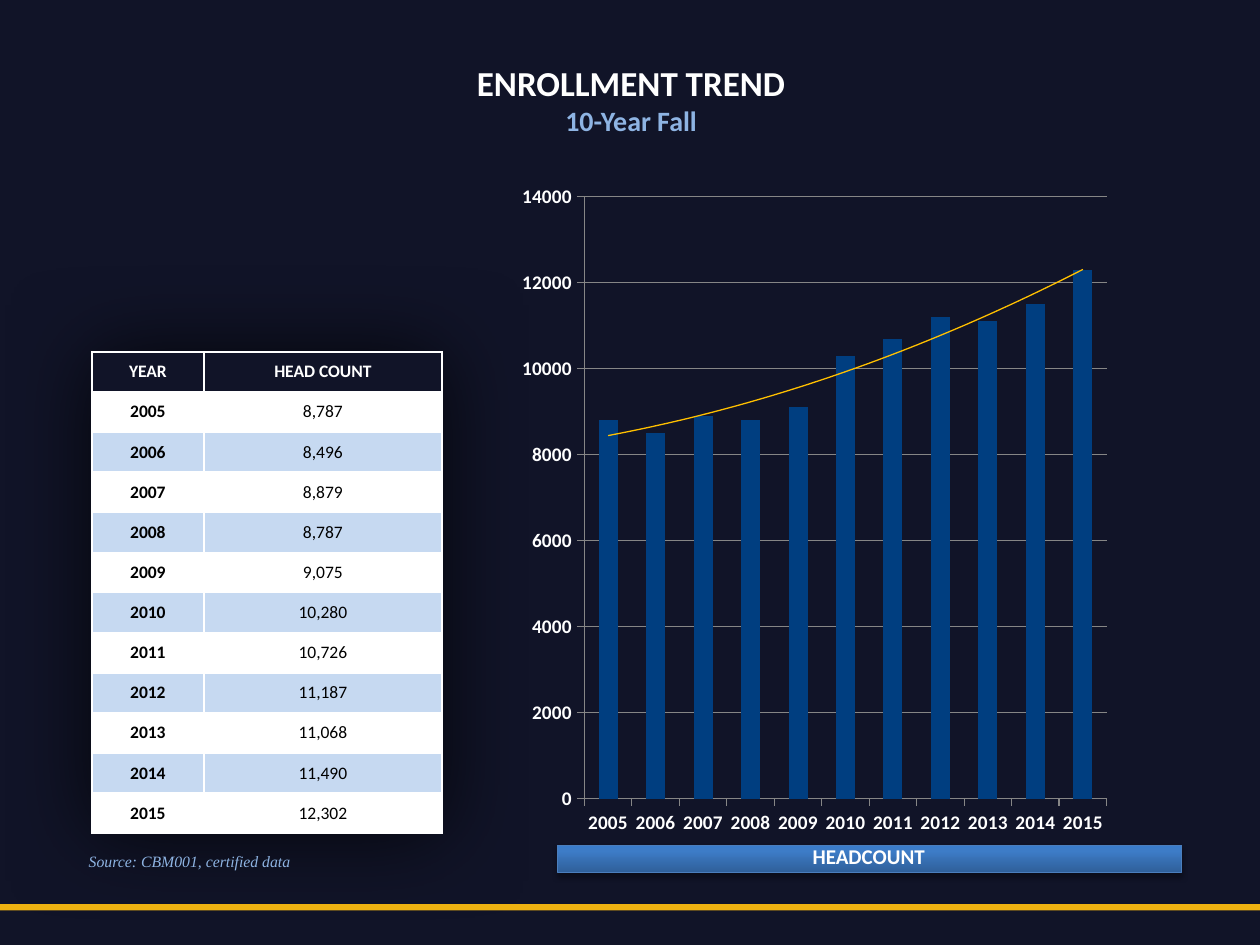
from pptx import Presentation
from pptx.chart.data import CategoryChartData
from pptx.dml.color import RGBColor
from pptx.enum.chart import XL_CHART_TYPE as ChartType, XL_TICK_MARK as TickMark
from pptx.enum.shapes import MSO_SHAPE as Shape
from pptx.enum.text import MSO_ANCHOR as Anchor, MSO_AUTO_SIZE as AutoSize, PP_ALIGN as Align
from pptx.oxml import parse_xml
from pptx.oxml.ns import nsdecls, qn
from pptx.util import Pt

NAVY, WHITE, BLACK = "111428", "FFFFFF", "000000"
PALE_BLUE, SKY, ROYAL = "C6D9F1", "8EB4E3", "003E80"
GOLD, AMBER, GRAY, EDGE = "EEB211", "FFC000", "868686", "4B7EBC"
BANNER_STOPS = [(0, "2F5F99"), (80, "3D7CC7"), (100, "3A7CCB")]
HEAD_COUNTS = {
    "2005": 8787, "2006": 8496, "2007": 8879, "2008": 8787, "2009": 9075, "2010": 10280,
    "2011": 10726, "2012": 11187, "2013": 11068, "2014": 11490, "2015": 12302,
}


def color(value):
    """Return the colour for a hex string."""
    return RGBColor.from_string(value)


def paint(target, value):
    """Give a shape, cell or background a solid fill."""
    target.fill.solid()
    target.fill.fore_color.rgb = color(value)


def write(para, text, size=10, tint=WHITE, font="Calibri", bold=False, italic=False,
          align=Align.CENTER):
    """Write one formatted span into a paragraph."""
    para.alignment = align
    span = para.add_run()
    span.text = text
    span.font.size, span.font.name = Pt(size), font
    span.font.bold, span.font.italic = bold, italic
    span.font.color.rgb = color(tint)


def shadow(alpha, blur, distance=0):
    """Return an effect list with a black shadow that falls downwards."""
    return parse_xml(
        f'<a:effectLst {nsdecls("a")}><a:outerShdw blurRad="{Pt(blur)}" '
        f'dist="{Pt(distance)}" dir="5400000" algn="ctr" rotWithShape="0">'
        f'<a:srgbClr val="{BLACK}"><a:alpha val="{alpha * 1000}"/></a:srgbClr>'
        '</a:outerShdw></a:effectLst>')


def add_text(page, box, text, **style):
    """Add a wrapped text box with one paragraph."""
    frame = page.shapes.add_textbox(*map(Pt, box)).text_frame
    frame.word_wrap = True
    write(frame.paragraphs[0], text, **style)


def add_title(page, box):
    """Place the title and its subtitle in the title placeholder."""
    title = page.shapes.title
    title.left, title.top, title.width, title.height = map(Pt, box)
    frame = title.text_frame
    frame.word_wrap = True
    frame.auto_size = AutoSize.NONE
    frame.vertical_anchor = Anchor.TOP
    write(frame.paragraphs[0], "ENROLLMENT TREND", size=20, bold=True)
    write(frame.add_paragraph(), "10-Year Fall", size=16, tint=SKY, bold=True)


def add_count_table(page, box):
    """Add the table of head counts with alternating row fills."""
    rows = [("YEAR", "HEAD COUNT")] + [(year, f"{n:,}") for year, n in HEAD_COUNTS.items()]
    table = page.shapes.add_table(len(rows), 2, *map(Pt, box)).table
    table.columns[0].width = Pt(box[2] * 0.32)
    table.columns[1].width = Pt(box[2] * 0.68)
    for r, texts in enumerate(rows):
        table.rows[r].height = Pt(box[3] / len(rows))
        fill = NAVY if r == 0 else WHITE if r % 2 else PALE_BLUE
        for c, text in enumerate(texts):
            cell = table.cell(r, c)
            paint(cell, fill)
            cell.vertical_anchor = Anchor.MIDDLE
            cell.margin_left = cell.margin_right = Pt(3)
            cell.margin_top = cell.margin_bottom = Pt(3)
            write(cell.text_frame.paragraphs[0], text, bold=r == 0 or c == 0,
                  tint=BLACK if r else WHITE)
    table._tbl.tblPr.insert(0, shadow(75, 50))


def format_axis(axis):
    """Set the text, line and ticks of a chart axis."""
    font = axis.tick_labels.font
    font.size, font.name, font.bold = Pt(11), "Calibri", True
    font.color.rgb = color(WHITE)
    axis.major_tick_mark = TickMark.OUTSIDE
    axis.minor_tick_mark = TickMark.NONE
    axis.format.line.color.rgb = color(GRAY)
    axis.format.line.width = Pt(0.75)


def add_trend(series):
    """Add a second-order polynomial trend line to a series."""
    trend = parse_xml(
        f'<c:trendline {nsdecls("c", "a")}><c:spPr><a:ln w="{Pt(0.75)}"><a:solidFill>'
        f'<a:srgbClr val="{AMBER}"/></a:solidFill></a:ln></c:spPr>'
        '<c:trendlineType val="poly"/><c:order val="2"/>'
        '<c:dispRSqr val="0"/><c:dispEq val="0"/></c:trendline>')
    series._element.find(qn("c:cat")).addprevious(trend)


def set_plot_box(chart, **portions):
    """Fix the inner plot area as portions of the chart."""
    area = chart._chartSpace.chart.plotArea
    for layout in area.findall(qn("c:layout")):
        area.remove(layout)
    places = "".join(f'<c:{name} val="{value}"/>' for name, value in portions.items())
    area.insert(0, parse_xml(
        f'<c:layout {nsdecls("c")}><c:manualLayout><c:layoutTarget val="inner"/>'
        f'<c:xMode val="edge"/><c:yMode val="edge"/>{places}</c:manualLayout></c:layout>'))


def add_trend_chart(page, box):
    """Add the column chart of rounded head counts with its trend line."""
    data = CategoryChartData()
    data.categories = list(HEAD_COUNTS)
    data.add_series("Series 1", [round(count, -2) for count in HEAD_COUNTS.values()])
    chart = page.shapes.add_chart(ChartType.COLUMN_CLUSTERED, *map(Pt, box), data).chart
    chart.has_legend = chart.has_title = False
    chart.font.size, chart.font.name = Pt(18), "Calibri"
    plot = chart.plots[0]
    plot.gap_width, plot.vary_by_categories = 150, False
    paint(plot.series[0].format, ROYAL)
    add_trend(plot.series[0])
    format_axis(chart.category_axis)
    values = chart.value_axis
    format_axis(values)
    values.minimum_scale, values.maximum_scale, values.major_unit = 0, 14000, 2000
    values.has_major_gridlines = True
    values.major_gridlines.format.line.color.rgb = color(GRAY)
    values.major_gridlines.format.line.width = Pt(0.75)
    set_plot_box(chart, x=0.1, y=0.02, w=0.68, h=0.87)


def add_banner(page, box):
    """Add the gradient banner and its caption."""
    left, top, width, height = box
    banner = page.shapes.add_shape(Shape.RECTANGLE, *map(Pt, box))
    banner.line.color.rgb = color(EDGE)
    banner.line.width = Pt(0.75)
    stops = "".join(f'<a:gs pos="{place * 1000}"><a:srgbClr val="{tint}"/></a:gs>'
                    for place, tint in BANNER_STOPS)
    properties = banner._element.spPr
    properties.find(qn("a:ln")).addprevious(parse_xml(
        f'<a:gradFill {nsdecls("a")} rotWithShape="1"><a:gsLst>{stops}</a:gsLst>'
        '<a:lin ang="16200000" scaled="0"/></a:gradFill>'))
    properties.append(shadow(35, 3.1, 1.8))
    add_text(page, (left + 0.5, top - 4.3, width - 2, height + 6), "HEADCOUNT",
             size=12, bold=True)


def add_footer_rule(page, box):
    """Add the gold rule across the foot of the slide."""
    rule = page.shapes.add_shape(Shape.RECTANGLE, *map(Pt, box))
    rule.shadow.inherit = False
    paint(rule, GOLD)
    rule.line.fill.background()


def main():
    """Build the enrollment slide and save it."""
    deck = Presentation()
    deck.slide_width, deck.slide_height = Pt(720), Pt(540)
    page = deck.slides.add_slide(deck.slide_layouts[5])
    paint(page.background, NAVY)
    add_count_table(page, (52.5, 201, 200, 275.5))
    add_trend_chart(page, (290, 104.5, 439, 395.5))
    add_banner(page, (318.7, 483, 356.5, 15.8))
    add_title(page, (124.5, 31.7, 472.3, 72.7))
    add_text(page, (43.6, 483, 359, 18), "Source: CBM001, certified data", size=9,
             tint=SKY, font="Times New Roman", italic=True, align=Align.LEFT)
    add_footer_rule(page, (-6.5, 516.7, 726.5, 3.6))
    deck.save("out.pptx")


if __name__ == "__main__":
    main()
